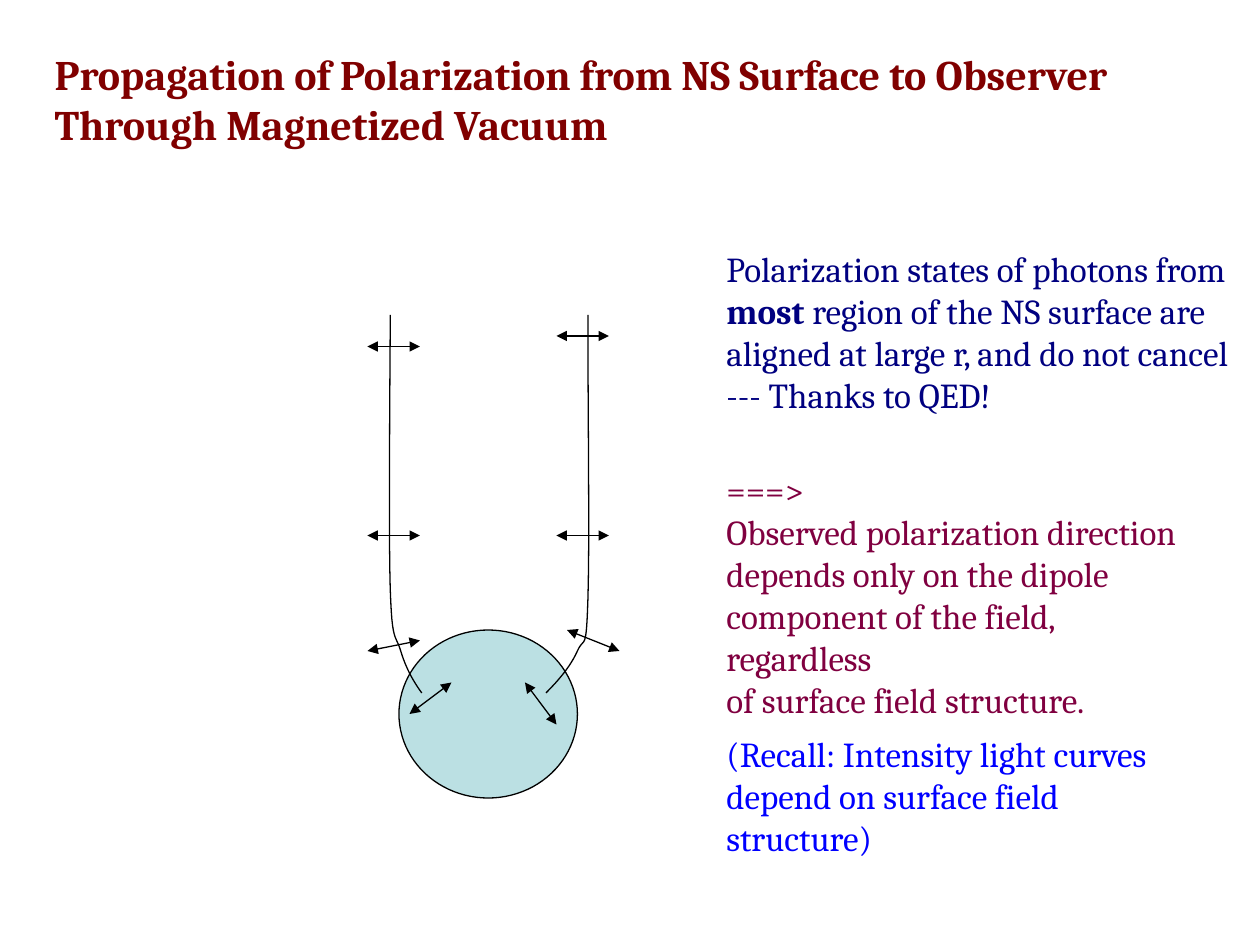
from lxml import etree
from pptx import Presentation
from pptx.dml.color import RGBColor
from pptx.enum import shapes, text
from pptx.oxml import ns
from pptx.util import Pt

# Content: a paragraph is (spans, colour, line spacing); a span is (words, bold)
FONT, BLACK = "Cambria", "000000"
MAROON, NAVY, PLUM, BLUE = "800000", "000080", "800040", "0000FF"

TITLE = [
    ([("Propagation of Polarization from NS Surface to Observer", True)], MAROON, 1),
    ([("Through Magnetized Vacuum", True)], MAROON, 1),
]
STATES = [
    ([("Polarization states of photons from", False)], NAVY, 1),
    ([("most", True), (" region of the NS surface are", False)], NAVY, 1),
    ([("aligned at large r, and do not cancel", False)], NAVY, 1),
    ([("--- Thanks to QED!", False)], NAVY, 1),
]
RESULT = [
    ([("===>", False)], PLUM, 1),
    ([("Observed polarization direction", False)], PLUM, 1),
    ([("depends only on the dipole", False)], PLUM, 1),
    ([("component of the field, regardless", False)], PLUM, 1),
    ([("of surface field structure.", False)], PLUM, 1),
    ([("(Recall: Intensity light curves", False)], BLUE, 1.3),
    ([("depend on surface field structure)", False)], BLUE, 1),
]

# Diagram, in points: left, top, width, height; x1, y1, x2, y2
STAR = (228, 360, 102, 96)
SURFACE_ARROWS = [(300, 390, 318, 414), (234, 408, 258, 390)]
RAY_ARROWS = [
    (210, 372, 240, 366), (318, 192, 348, 192), (318, 306, 348, 306),
    (210, 198, 240, 198), (210, 306, 240, 306), (324, 360, 354, 372),
]
# Each ray is a start point, then three Bezier points per segment
RAYS = [
    [(241, 396), (236, 389), (232, 382), (229, 372), (226, 362), (224, 368),
     (223, 336), (222, 304), (223, 206), (223, 180)],
    [(312, 396), (319, 389), (326, 381), (330, 372), (334, 363), (335, 374),
     (336, 342), (337, 310), (336, 245), (336, 180)],
]
STEPS = 12


def colour(value):
    return RGBColor.from_string(value)


def outline(shape):
    shape.line.color.rgb = colour(BLACK)
    shape.line.width = Pt(0.75)


def write(box, paragraphs, size, wrap):
    frame = box.text_frame
    frame.word_wrap = wrap
    frame.auto_size = text.MSO_AUTO_SIZE.NONE
    frame.vertical_anchor = text.MSO_ANCHOR.TOP
    for index, (spans, ink, spacing) in enumerate(paragraphs):
        para = frame.paragraphs[0] if index == 0 else frame.add_paragraph()
        para.alignment = text.PP_ALIGN.LEFT
        para.line_spacing = spacing
        for words, bold in spans:
            span = para.add_run()
            span.text = words
            span.font.name, span.font.size = FONT, Pt(size)
            span.font.bold = bold
            span.font.color.rgb = colour(ink)


def add_text(page, area, paragraphs, wrap):
    box = page.shapes.add_textbox(*map(Pt, area))
    write(box, paragraphs, 20, wrap)


def add_arrow(page, ends):
    arrow = page.shapes.add_connector(shapes.MSO_CONNECTOR.STRAIGHT, *map(Pt, ends))
    outline(arrow)
    line = arrow.line._get_or_add_ln()
    for end in ("a:headEnd", "a:tailEnd"):
        etree.SubElement(line, ns.qn(end), type="triangle")
    etree.SubElement(arrow._element.spPr, ns.qn("a:effectLst"))


def bezier(controls, t):
    weights = ((1 - t) ** 3, 3 * t * (1 - t) ** 2, 3 * t * t * (1 - t), t ** 3)
    return tuple(Pt(sum(w * point[axis] for w, point in zip(weights, controls)))
                 for axis in (0, 1))


def add_ray(page, points):
    builder = page.shapes.build_freeform(*map(Pt, points[0]))
    builder.add_line_segments(
        [bezier(points[first:first + 4], step / STEPS)
         for first in range(0, len(points) - 1, 3)
         for step in range(1, STEPS + 1)], close=False)
    ray = builder.convert_to_shape()
    ray.shadow.inherit = False
    ray.fill.background()
    outline(ray)


def main():
    deck = Presentation()
    deck.slide_width, deck.slide_height = Pt(720), Pt(540)
    page = deck.slides.add_slide(deck.slide_layouts[5])

    # Title
    title = page.shapes.title
    title.left, title.top, title.width, title.height = map(Pt, (24, 24, 697, 65))
    write(title, TITLE, 24, True)

    # Neutron star, rays and polarization directions
    star = page.shapes.add_shape(shapes.MSO_SHAPE.OVAL, *map(Pt, STAR))
    star.shadow.inherit = False
    star.fill.solid()
    star.fill.fore_color.rgb = colour("BBE0E3")
    outline(star)
    for ends in SURFACE_ARROWS:
        add_arrow(page, ends)
    for points in RAYS:
        add_ray(page, points)
    for ends in RAY_ARROWS:
        add_arrow(page, ends)

    # Explanation
    add_text(page, (408, 138, 305, 103), STATES, False)
    add_text(page, (408, 264, 286, 207), RESULT, True)

    deck.save("out.pptx")


if __name__ == "__main__":
    main()
